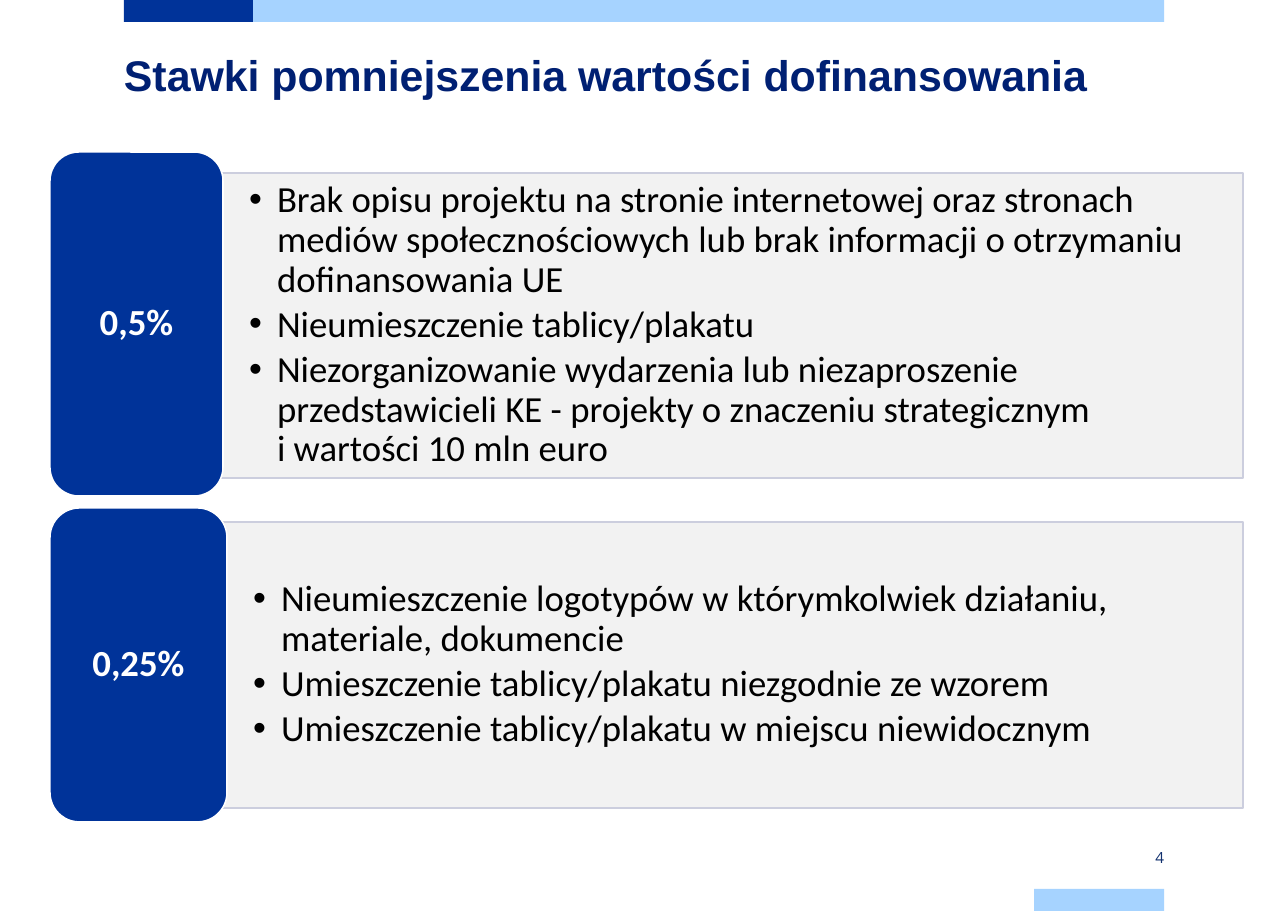
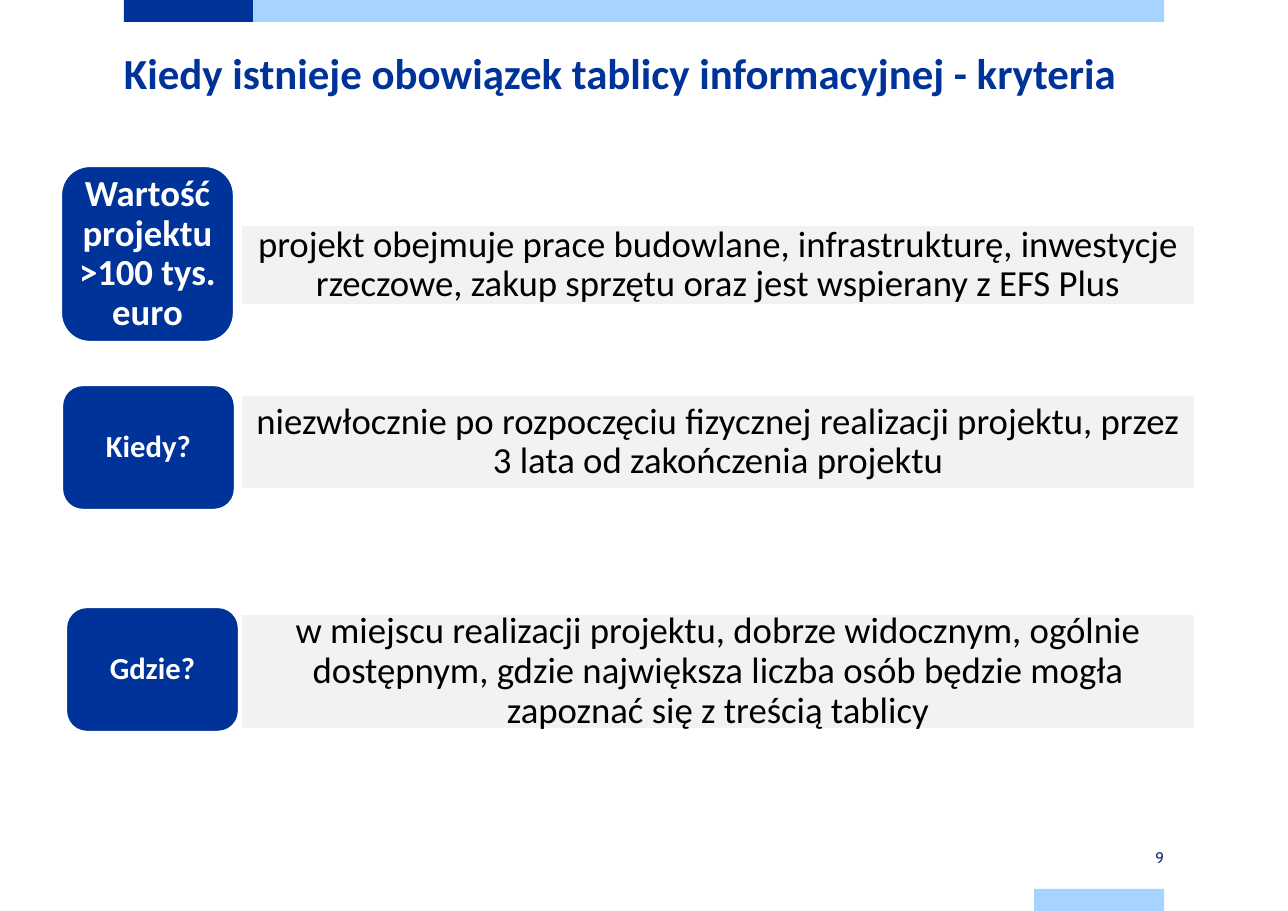
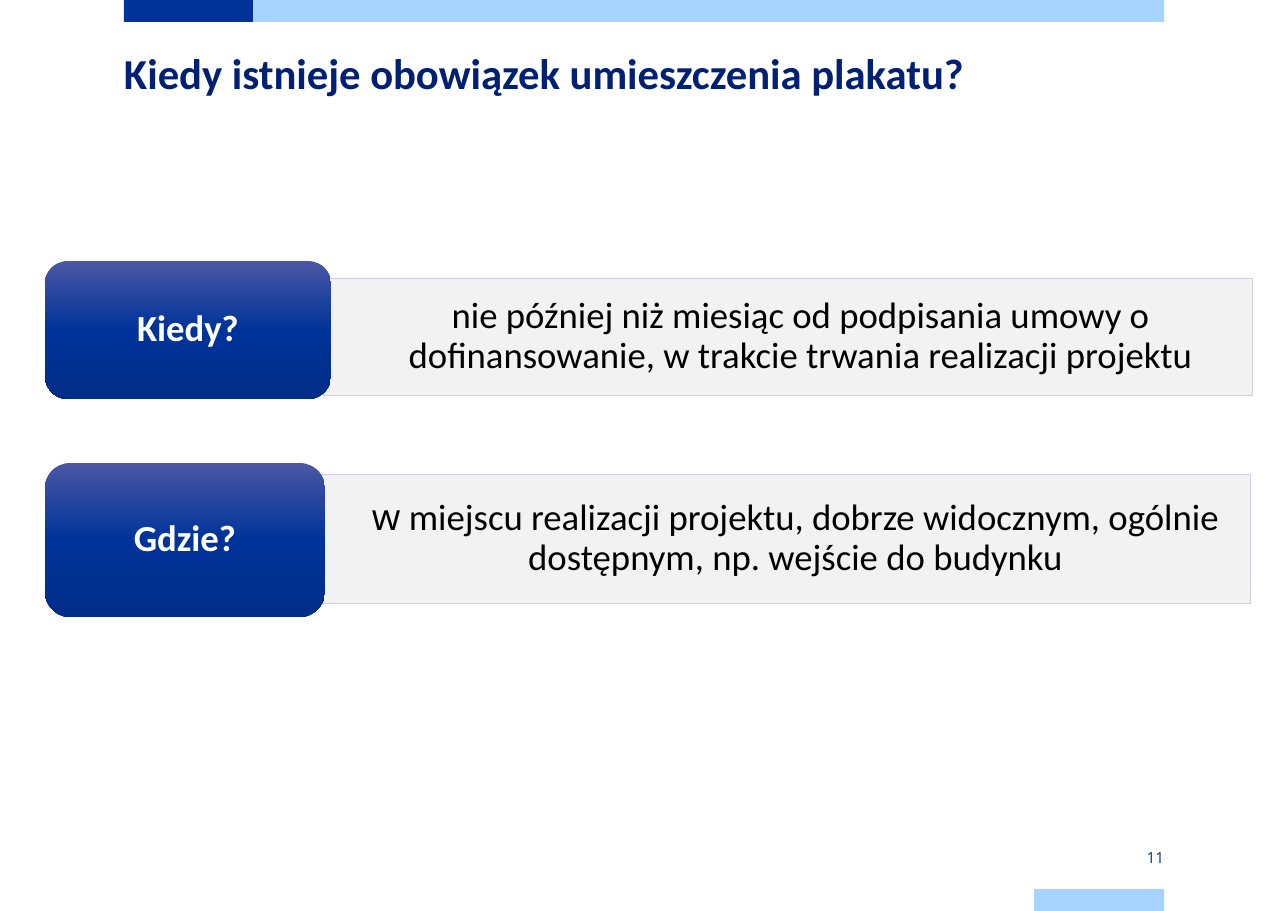
from copy import deepcopy

from lxml.etree import SubElement
from pptx import Presentation
from pptx.dml.color import RGBColor
from pptx.enum.shapes import MSO_SHAPE
from pptx.enum.text import MSO_ANCHOR, MSO_AUTO_SIZE, PP_ALIGN
from pptx.oxml.ns import qn
from pptx.util import Pt

PX = 8298
NAVY = "002073"
BLUE = "003399"
SKY = "A6D3FF"
GREY = "F2F2F2"
EDGE = "CCCEDE"
WHITE = "FFFFFF"
BLACK = "000000"
NUMBER_BLUE = "11306E"
PILL_GRADIENT = [(0, "4B57A4"), (0.5, BLUE), (1, "002D88")]
BANDS = [
    ((124, 0, 130, 22), BLUE),
    ((253, 0, 911, 22), SKY),
    ((1034, 889, 130, 22), SKY),
]
TITLE_ONLY, TWO_CONTENT = 5, 3


def rgb(value):
    return RGBColor.from_string(value)


def emu(box):
    return [length * PX for length in box]


def place(shape, box):
    shape.left, shape.top, shape.width, shape.height = emu(box)


def paint(shape, fill, edge=None, edge_width=1):
    shape.fill.solid()
    shape.fill.fore_color.rgb = rgb(fill)
    outline(shape, edge, edge_width)


def outline(shape, edge, edge_width):
    if edge:
        shape.line.color.rgb = rgb(edge)
        shape.line.width = Pt(edge_width)
    else:
        shape.line.fill.background()


def paint_gradient(shape, stops):
    shape.fill.gradient()
    shape.fill.gradient_angle = 270
    stop_list = shape.element.xpath(".//a:gsLst")[0]
    stop_list.append(deepcopy(stop_list[0]))
    for stop, (position, color) in zip(shape.fill.gradient_stops, stops):
        stop.position = position
        stop.color.rgb = rgb(color)
    outline(shape, None, 0)


def add_block(slide, kind, box):
    block = slide.shapes.add_shape(kind, *emu(box))
    block.shadow.inherit = False
    return block


def set_frame(frame, anchor=MSO_ANCHOR.MIDDLE, insets=(0, 0, 0, 0)):
    frame.word_wrap = True
    frame.auto_size = MSO_AUTO_SIZE.NONE
    frame.vertical_anchor = anchor
    (frame.margin_left, frame.margin_top,
     frame.margin_right, frame.margin_bottom) = emu(insets)


def set_paragraph(paragraph, size, color, bold=False, font="Calibri",
                  align=PP_ALIGN.CENTER, spacing=0.9):
    paragraph.alignment = align
    paragraph.line_spacing = spacing
    paragraph.space_before = Pt(0)
    paragraph.font.size = Pt(size)
    paragraph.font.bold = bold
    paragraph.font.name = font
    paragraph.font.color.rgb = rgb(color)


def add_bullet(paragraph, indent):
    properties = paragraph._p.get_or_add_pPr()
    properties.set("marL", str(indent * PX))
    properties.set("indent", str(-indent * PX))
    SubElement(properties, qn("a:buFont")).set("typeface", "Arial")
    SubElement(properties, qn("a:buChar")).set("char", "•")


def add_bands(master, slide):
    bands = [add_block(slide, MSO_SHAPE.RECTANGLE, box) for box, _ in BANDS]
    for number, (band, (_, color)) in enumerate(zip(bands, BANDS), 20):
        paint(band, color)
        band.element.xpath(".//p:cNvPr")[0].set("id", str(number))
        master.shapes.element.append(band.element)


def add_slide(prs, layout, title, number, top=43, color=NAVY, size=28,
              title_font="Calibri", number_font="Open Sans"):
    slide = prs.slides.add_slide(prs.slide_layouts[layout])
    heading = slide.shapes.title
    place(heading, (124, top, 1041, 83))
    set_frame(heading.text_frame, MSO_ANCHOR.TOP)
    heading.text_frame.text = title
    set_paragraph(heading.text_frame.paragraphs[0], size, color, True,
                  title_font, PP_ALIGN.LEFT, Pt(36))
    page = slide.shapes.add_textbox(*emu((1034, 846, 130, 22)))
    set_frame(page.text_frame)
    page.text_frame.text = number
    set_paragraph(page.text_frame.paragraphs[0], 10, NUMBER_BLUE,
                  font=number_font, align=PP_ALIGN.RIGHT, spacing=1.0)
    return slide


def panel_box(box, panel):
    left, top, width, _ = box
    shift, drop, height = panel
    return left + shift, top + drop, width - shift, height


def add_pill(slide, box, width, label, size=24, edge=None, edge_width=1):
    left, top, _, height = box
    pill = add_block(slide, MSO_SHAPE.ROUNDED_RECTANGLE,
                     (left, top, width, height))
    if edge:
        paint(pill, BLUE, edge, edge_width)
    else:
        paint_gradient(pill, PILL_GRADIENT)
    set_frame(pill.text_frame, insets=(9, 0, 9, 0))
    paragraph = pill.text_frame.paragraphs[0]
    paragraph.text = label
    set_paragraph(paragraph, size, WHITE, True)


def add_list_row(slide, box, pill_width, panel, label, items, holder):
    place(holder, panel_box(box, panel))
    paint(holder, GREY, EDGE)
    frame = holder.text_frame
    set_frame(frame, insets=(30, 15, 30, 15))
    for index, item in enumerate(items):
        paragraph = frame.add_paragraph() if index else frame.paragraphs[0]
        paragraph.text = item
        add_bullet(paragraph, 28)
        set_paragraph(paragraph, 24, BLACK, align=PP_ALIGN.LEFT)
        paragraph.space_after = Pt(3.6)
    add_pill(slide, box, pill_width, label, edge=WHITE)


def add_answer_row(slide, box, pill_width, panel, label, answer, lead="",
                   label_size=24, insets=(11, 0, 11, 0), panel_edge=WHITE,
                   edge_width=1.5, pill_edge=None):
    answer_panel = add_block(slide, MSO_SHAPE.RECTANGLE, panel_box(box, panel))
    paint(answer_panel, GREY, panel_edge, edge_width)
    set_frame(answer_panel.text_frame, insets=insets)
    paragraph = answer_panel.text_frame.paragraphs[0]
    if lead:
        opening = paragraph.add_run()
        opening.text = lead
        opening.font.name = "Open Sans"
    paragraph.add_run().text = answer
    set_paragraph(paragraph, 24, BLACK)
    add_pill(slide, box, pill_width, label, label_size, pill_edge, edge_width)


def add_rates(prs):
    slide = add_slide(prs, TWO_CONTENT,
                      "Stawki pomniejszenia wartości dofinansowania", "4",
                      top=45, title_font="Arial")
    add_bands(prs.slide_master, slide)
    rows = [
        ((50, 152, 1193, 344), 173, (169, 21, 305), "0,5%", [
            "Brak opisu projektu na stronie internetowej oraz stronach mediów "
            "społecznościowych lub brak informacji o otrzymaniu "
            "dofinansowania UE",
            "Nieumieszczenie tablicy/plakatu",
            "Niezorganizowanie wydarzenia lub niezaproszenie przedstawicieli "
            "KE - projekty o znaczeniu strategicznym \n"
            "i wartości 10 mln euro",
        ]),
        ((50, 508, 1193, 314), 177, (173, 14, 286), "0,25%", [
            "Nieumieszczenie logotypów w którymkolwiek działaniu, materiale, "
            "dokumencie",
            "Umieszczenie tablicy/plakatu niezgodnie ze wzorem",
            "Umieszczenie tablicy/plakatu w miejscu niewidocznym",
        ]),
    ]
    for index, row in enumerate(rows, 1):
        add_list_row(slide, *row, holder=slide.placeholders[index])


def add_board_criteria(prs):
    slide = add_slide(prs, TITLE_ONLY,
                      "Kiedy istnieje obowiązek tablicy informacyjnej - kryteria",
                      "9", color=BLUE, number_font="Cabin")
    rows = [
        ((61, 166, 1134, 176), 173, (180, 59, 80),
         "Wartość projektu\n>100 tys. euro",
         "projekt obejmuje prace budowlane, infrastrukturę, inwestycje "
         "rzeczowe, zakup sprzętu oraz jest wspierany z EFS Plus", 24),
        ((62, 385, 1133, 125), 173, (179, 10, 94), "Kiedy?",
         "niezwłocznie po rozpoczęciu fizycznej realizacji projektu, przez "
         "3 lata od zakończenia projektu", 20),
        ((66, 607, 1129, 125), 173, (175, 7, 115), "Gdzie?",
         "w miejscu realizacji projektu, dobrze widocznym, ogólnie dostępnym, "
         "gdzie największa liczba osób będzie mogła zapoznać się z treścią "
         "tablicy", 20),
    ]
    for *row, label_size in rows:
        add_answer_row(slide, *row, label_size=label_size, pill_edge=WHITE)


def add_poster_criteria(prs):
    slide = add_slide(prs, TITLE_ONLY,
                      "Kiedy istnieje obowiązek umieszczenia plakatu?", "11",
                      size=27.9)
    rows = [
        ((45, 261, 1207, 138), 286, (278, 17, 117), "Kiedy?",
         "nie później niż miesiąc od podpisania umowy o dofinansowanie, "
         "w trakcie trwania realizacji projektu"),
        ((45, 463, 1205, 154), 280, (270, 11, 129), "Gdzie?",
         " miejscu realizacji projektu, dobrze widocznym, ogólnie dostępnym, "
         "np. wejście do budynku", "w"),
    ]
    for row in rows:
        add_answer_row(slide, *row, insets=(50, 15, 24, 15), panel_edge=EDGE,
                       edge_width=0.5)


def main():
    prs = Presentation()
    prs.slide_width, prs.slide_height = emu((1288, 911))
    add_rates(prs)
    add_board_criteria(prs)
    add_poster_criteria(prs)
    prs.save("out.pptx")


if __name__ == "__main__":
    main()
